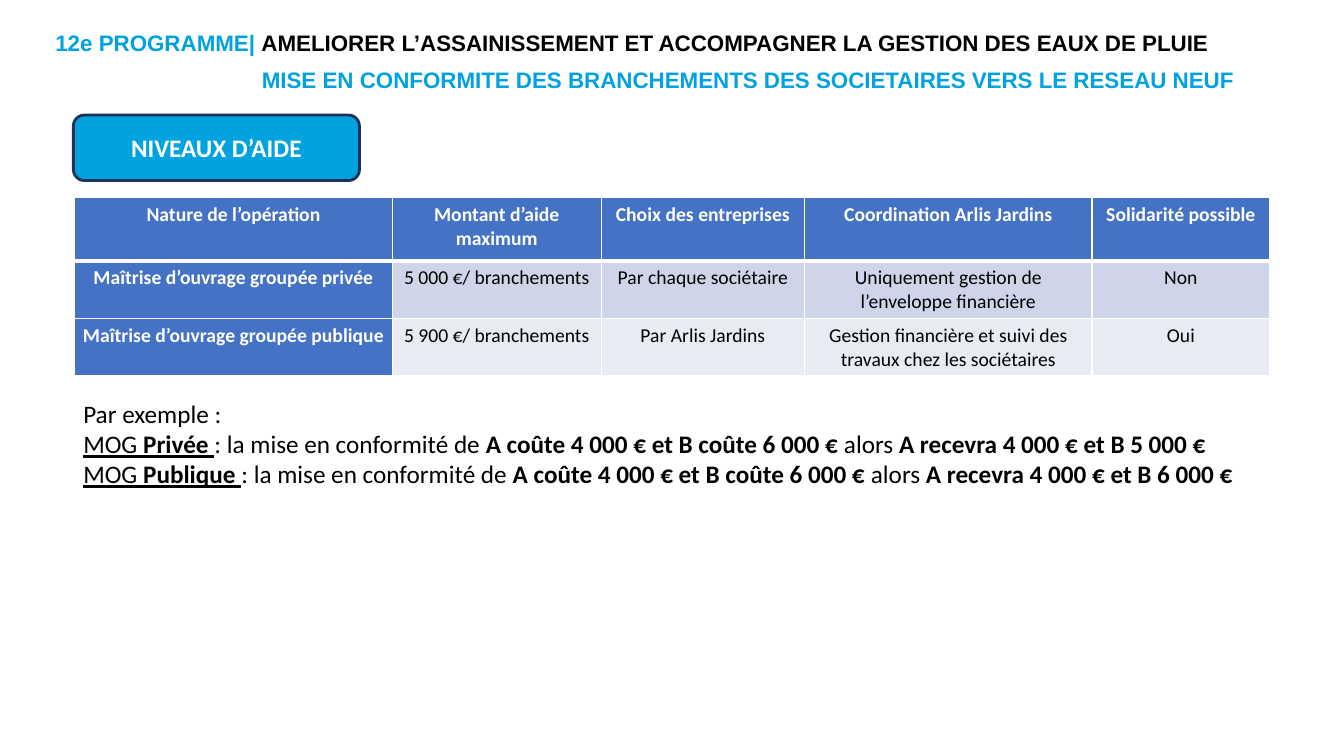
from lxml.etree import SubElement
from pptx import Presentation
from pptx.dml.color import RGBColor
from pptx.enum.shapes import MSO_SHAPE
from pptx.enum.text import MSO_ANCHOR, MSO_AUTO_SIZE, PP_ALIGN
from pptx.oxml.ns import qn
from pptx.util import Cm, Pt

COLORS = {
    "sky": "00A2DF", "navy": "1E3256", "blue": "4472C4",
    "band_dark": "CFD5E9", "band_light": "E8EBF4",
    "white": "FFFFFF", "black": "000000",
}


def add_run(paragraph, text, color, **formats):
    run = paragraph.add_run()
    run.text = text
    run.font.color.rgb = RGBColor.from_string(COLORS[color])
    for name, value in formats.items():
        setattr(run.font, name, value)


def add_border(cell, side, width):
    line = SubElement(cell._tc.get_or_add_tcPr(), qn(f"a:{side}"), w=str(Pt(width)))
    fill = SubElement(line, qn("a:solidFill"))
    SubElement(fill, qn("a:srgbClr"), val=COLORS["white"])


presentation = Presentation()
presentation.slide_width = Cm(33.87)
presentation.slide_height = Cm(19.05)
slide = presentation.slides.add_slide(presentation.slide_layouts[5])

heading = {"name": "Arial", "size": Pt(16), "bold": True}
body = {"name": "Calibri", "size": Pt(18)}
cell_text = {"name": "Calibri", "size": Pt(14)}

title = slide.shapes.title
subtitle = slide.shapes.add_textbox(Cm(6.35), Cm(1.55), Cm(26.72), Cm(0.94))
example = slide.shapes.add_textbox(Cm(1.85), Cm(9.91), Cm(30.12), Cm(2.54))
title_place = {"left": Cm(1.14), "top": Cm(0.61), "width": Cm(31.34), "height": Cm(0.94)}
for name, value in title_place.items():
    setattr(title, name, value)

frame_format = {
    "word_wrap": True,
    "auto_size": MSO_AUTO_SIZE.SHAPE_TO_FIT_TEXT,
    "vertical_anchor": MSO_ANCHOR.TOP,
}
for shape in (title, subtitle, example):
    for name, value in frame_format.items():
        setattr(shape.text_frame, name, value)

title_paragraph = title.text_frame.paragraphs[0]
title_paragraph.alignment = PP_ALIGN.LEFT
title_paragraph.line_spacing = 1.0
add_run(title_paragraph, "12e PROGRAMME| ", "sky", **heading)
add_run(title_paragraph, "AMELIORER L’ASSAINISSEMENT ET ACCOMPAGNER LA GESTION DES EAUX DE PLUIE",
        "black", **heading)
add_run(subtitle.text_frame.paragraphs[0],
        "MISE EN CONFORMITE DES BRANCHEMENTS DES SOCIETAIRES VERS LE RESEAU NEUF",
        "sky", **heading)

badge = slide.shapes.add_shape(MSO_SHAPE.ROUNDED_RECTANGLE, Cm(1.85), Cm(2.9), Cm(7.21), Cm(1.65))
badge.shadow.inherit = False
badge.fill.solid()
badge.fill.fore_color.rgb = RGBColor.from_string(COLORS["sky"])
badge.line.color.rgb = RGBColor.from_string(COLORS["navy"])
badge.line.width = Pt(2)
badge.text_frame.vertical_anchor = MSO_ANCHOR.MIDDLE
badge_paragraph = badge.text_frame.paragraphs[0]
badge_paragraph.alignment = PP_ALIGN.CENTER
add_run(badge_paragraph, "NIVEAUX D’AIDE", "white", bold=True, **body)

rows = [
    ["Nature de l’opération", "Montant d’aide maximum", "Choix des entreprises",
     "Coordination Arlis Jardins", "Solidarité possible"],
    ["Maîtrise d’ouvrage groupée privée", "5 000 €/ branchements", "Par chaque sociétaire",
     "Uniquement gestion de l’enveloppe financière", "Non"],
    ["Maîtrise d’ouvrage groupée publique", "5 900 €/ branchements", "Par Arlis Jardins",
     "Gestion financière et suivi des travaux chez les sociétaires", "Oui"],
]
column_widths = [8.01, 5.26, 5.13, 7.24, 4.48]
row_heights = [1.6, 1.3, 1.35]
bands = ["blue", "band_dark", "band_light"]
cell_format = {
    "margin_left": Cm(0.18), "margin_right": Cm(0.18),
    "margin_top": Cm(0.13), "margin_bottom": Cm(0.13),
    "vertical_anchor": MSO_ANCHOR.TOP,
}

table = slide.shapes.add_table(len(rows), len(column_widths), Cm(1.88), Cm(4.98),
                               Cm(sum(column_widths)), Cm(sum(row_heights))).table
for column, width in zip(table.columns, column_widths):
    column.width = Cm(width)
for row, height in zip(table.rows, row_heights):
    row.height = Cm(height)

for row_index, texts in enumerate(rows):
    for column_index, text in enumerate(texts):
        cell = table.cell(row_index, column_index)
        is_header = row_index == 0 or column_index == 0
        for name, value in cell_format.items():
            setattr(cell, name, value)
        add_border(cell, "lnL", 0.96)
        add_border(cell, "lnR", 0.96)
        add_border(cell, "lnT", 3 if row_index == 1 else 0.96)
        add_border(cell, "lnB", 3 if row_index == 0 else 0.96)
        cell.fill.solid()
        cell.fill.fore_color.rgb = RGBColor.from_string(
            COLORS["blue" if is_header else bands[row_index]])
        paragraph = cell.text_frame.paragraphs[0]
        paragraph.alignment = PP_ALIGN.CENTER
        add_run(paragraph, text, "white" if is_header else "black", bold=is_header, **cell_text)

add_run(example.text_frame.paragraphs[0], "Par exemple :", "black", **body)
for kind, amount in (("Privée", "5 000 €"), ("Publique", "6 000 €")):
    paragraph = example.text_frame.add_paragraph()
    for text, bold, underline in (
        ("MOG ", False, True),
        (kind, True, True),
        (" ", False, True),
        (": la mise en conformité de ", False, False),
        ("A coûte 4 000 € et B coûte 6 000 € ", True, False),
        ("alors ", False, False),
        (f"A recevra 4 000 € et B {amount}", True, False),
    ):
        add_run(paragraph, text, "black", bold=bold, underline=underline, **body)

presentation.save("out.pptx")
